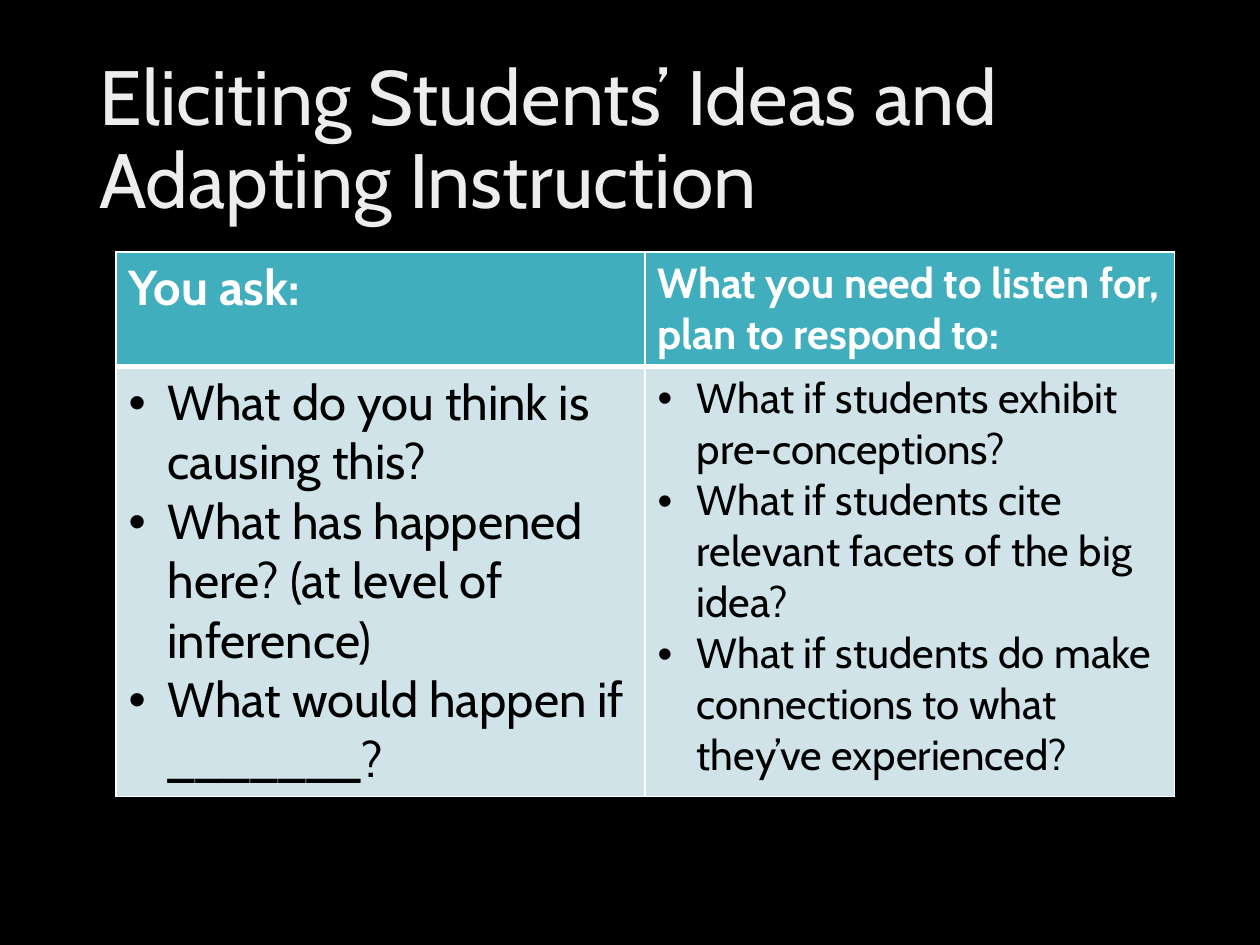
"""Build a slide pairing teacher questions with the student ideas to listen for."""
from lxml.etree import SubElement
from pptx import Presentation
from pptx.dml.color import RGBColor
from pptx.enum.text import MSO_ANCHOR
from pptx.oxml.ns import qn
from pptx.util import Inches, Pt

FONT = "Cabin"
BLACK = RGBColor(0x00, 0x00, 0x00)
WHITE = RGBColor(0xFF, 0xFF, 0xFF)
TITLE_GRAY = RGBColor(0xED, 0xED, 0xED)
TEAL = RGBColor(0x41, 0xAE, 0xBD)
PALE_TEAL = RGBColor(0xCF, 0xE3, 0xE8)

WIDTH, HEIGHT = Inches(10), Inches(7.5)
COL_WIDTH = Inches(4.2)
ROW_HEIGHTS = Inches(0.91), Inches(3.41)
INDENT = Inches(0.31)

TITLE = "Eliciting Students’ Ideas and Adapting Instruction"
COLUMNS = [
    (28, "You ask:", [
        "What do you think is causing this?",
        "What has happened here? (at level of inference)",
        "What would happen if _______?",
    ]),
    (24, "What you need to listen for, plan to respond to:", [
        "What if students exhibit pre-conceptions?",
        "What if students cite relevant facets of the big idea?",
        "What if students do make connections to what they’ve experienced?",
    ]),
]


def add_run(p, text, size, color, bold=False):
    r = p.add_run()
    r.text = text
    r.font.name, r.font.size, r.font.bold = FONT, Pt(size), bold
    r.font.color.rgb = color


def add_title(s):
    sp = s.shapes.add_textbox(Inches(0.69), Inches(0.4), Inches(8.62), Inches(1.45))
    tf = sp.text_frame
    tf.word_wrap = True
    tf.vertical_anchor = MSO_ANCHOR.MIDDLE
    p = tf.paragraphs[0]
    p.line_spacing = 0.9
    add_run(p, TITLE, 44, TITLE_GRAY)


def set_bullet(p):
    pPr = p._p.get_or_add_pPr()
    pPr.set("marL", str(INDENT))
    pPr.set("indent", str(-INDENT))
    SubElement(pPr, qn("a:buFont"), typeface="Arial")
    SubElement(pPr, qn("a:buChar"), char="•")


def set_border(cell, side, points):
    ln = SubElement(cell._tc.get_or_add_tcPr(), qn(f"a:ln{side}"), w=str(Pt(points)))
    fill = SubElement(ln, qn("a:solidFill"))
    SubElement(fill, qn("a:srgbClr"), val=str(WHITE))


def fill_cell(cell, lines, size, header):
    for side in "LRTB":
        heavy = side == ("B" if header else "T")
        set_border(cell, side, 3 if heavy else 1)
    cell.fill.solid()
    cell.fill.fore_color.rgb = TEAL if header else PALE_TEAL
    tf = cell.text_frame
    for i, line in enumerate(lines):
        p = tf.add_paragraph() if i else tf.paragraphs[0]
        if not header:
            set_bullet(p)
        add_run(p, line, size, WHITE if header else BLACK, header)


def add_question_table(s):
    count = len(COLUMNS)
    frame = s.shapes.add_table(2, count, Inches(0.92), Inches(2),
                               COL_WIDTH * count, sum(ROW_HEIGHTS))
    table = frame.table
    table.horz_banding = False
    for row, height in zip(table.rows, ROW_HEIGHTS):
        row.height = height
    for col, (size, heading, questions) in enumerate(COLUMNS):
        table.columns[col].width = COL_WIDTH
        fill_cell(table.cell(0, col), [heading], size, True)
        fill_cell(table.cell(1, col), questions, size, False)


def main():
    prs = Presentation()
    prs.slide_width, prs.slide_height = WIDTH, HEIGHT
    s = prs.slides.add_slide(prs.slide_layouts[6])
    s.background.fill.solid()
    s.background.fill.fore_color.rgb = BLACK
    add_title(s)
    add_question_table(s)
    prs.save("out.pptx")


if __name__ == "__main__":
    main()
